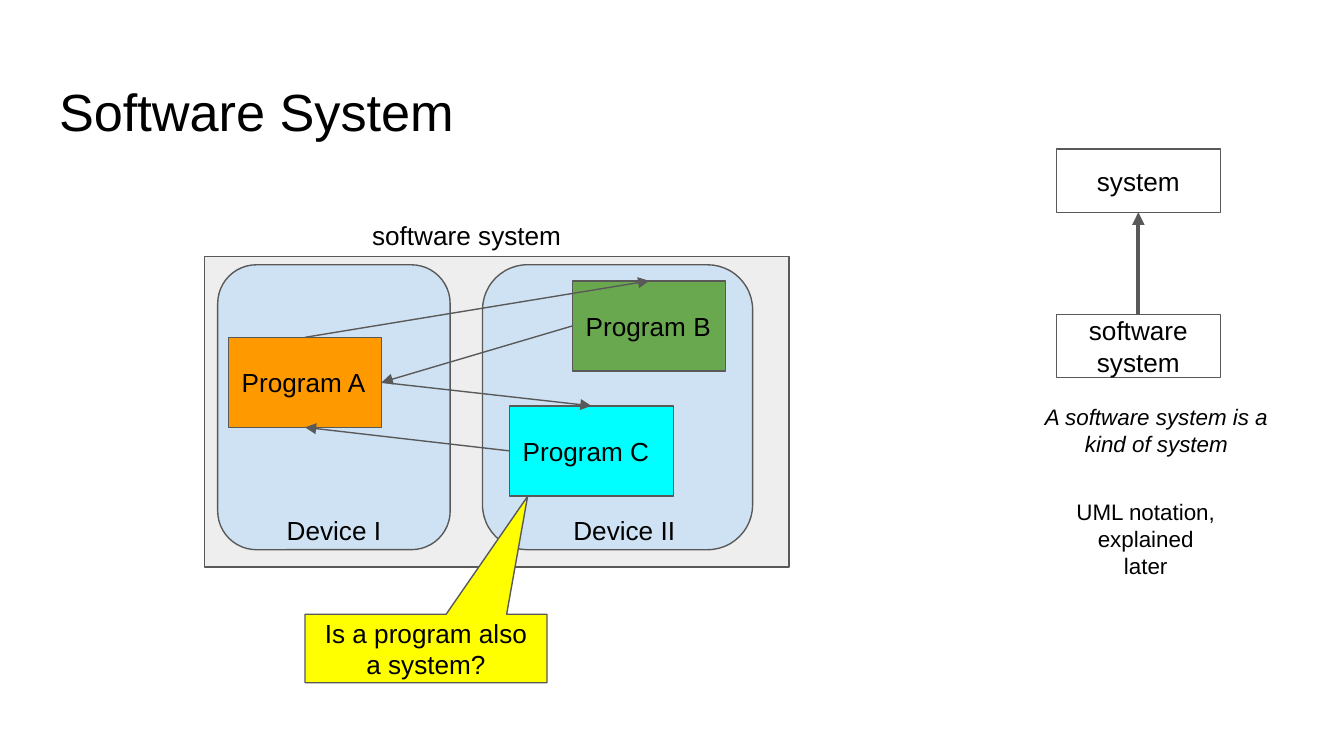
from lxml import etree
from pptx import Presentation
from pptx.dml.color import RGBColor
from pptx.enum.shapes import MSO_CONNECTOR, MSO_SHAPE
from pptx.enum.text import MSO_ANCHOR, MSO_AUTO_SIZE, PP_ALIGN
from pptx.oxml.ns import qn
from pptx.util import Inches, Pt

RECT, ROUND = MSO_SHAPE.RECTANGLE, MSO_SHAPE.ROUNDED_RECTANGLE
CALLOUT = MSO_SHAPE.ROUNDED_RECTANGULAR_CALLOUT
LEFT, CENTER = PP_ALIGN.LEFT, PP_ALIGN.CENTER
TOP, MIDDLE = MSO_ANCHOR.TOP, MSO_ANCHOR.MIDDLE
STRAIGHT = MSO_CONNECTOR.STRAIGHT
NORTH, WEST, SOUTH, EAST = range(4)  # connection sites of a rectangle
FONT, INK, GREY = "Arial", "000000", "595959"

# Content: boxes are left, top, width, height in inches
TITLE = "Software System"
FRAMES = [
    (RECT, (1.52, 1.91, 4.35, 2.31), "EEEEEE"),
    (ROUND, (1.62, 1.97, 1.73, 2.12), "CFE2F3"),
    (ROUND, (3.59, 1.97, 2.01, 2.12), "CFE2F3"),
]
NODES = {
    "A": ("Program A", (1.7, 2.51, 1.14, 0.67), "FF9900", LEFT),
    "B": ("Program B", (4.26, 2.09, 1.14, 0.67), "6AA84F", LEFT),
    "C": ("Program C", (3.79, 3.02, 1.22, 0.67), "00FFFF", LEFT),
    "system": ("system", (7.86, 1.11, 1.22, 0.47), None, CENTER),
    "software": ("software\nsystem", (7.86, 2.34, 1.22, 0.47), None, CENTER),
}
ARROWS = [
    ("A", EAST, "C", NORTH, 0.75),
    ("C", WEST, "A", SOUTH, 0.75),
    ("A", NORTH, "B", NORTH, 0.75),
    ("B", WEST, "A", EAST, 0.75),
    ("software", NORTH, "system", SOUTH, 2.25),
]
LABELS = [
    ("software system", (2.67, 1.53, 1.63, 0.29), dict(align=LEFT)),
    ("Device I", (1.78, 3.73, 1.41, 0.34), {}),
    ("Device II", (3.94, 3.73, 1.41, 0.34), {}),
    ("A software system is a kind of system", (7.6, 2.9, 2.01, 0.63),
     dict(size=12, italic=True)),
    ("UML notation, explained later", (7.89, 3.61, 1.27, 1.14), dict(size=12)),
]
QUESTION = ("Is a program also a system?", (2.27, 4.57, 1.8, 0.51), "FFFF00")
TIP = (0.42, -2.22, 0)


def color(code):
    return RGBColor.from_string(code)


def write(shape, text, size=14, align=CENTER, anchor=TOP, italic=False):
    frame = shape.text_frame
    frame.auto_size = MSO_AUTO_SIZE.NONE
    frame.word_wrap = True
    frame.vertical_anchor = anchor
    frame.margin_left = frame.margin_right = Inches(0.1)
    frame.margin_top = frame.margin_bottom = Inches(0.1)
    frame.text = text
    for para in frame.paragraphs:
        para.alignment = align
        font = para.font
        font.name, font.size, font.italic = FONT, Pt(size), italic
        font.color.rgb = color(INK)


def draw(kind, box, fill):
    shape = slide.shapes.add_shape(kind, *map(Inches, box))
    shape.shadow.inherit = False
    if fill:
        shape.fill.solid()
        shape.fill.fore_color.rgb = color(fill)
    else:
        shape.fill.background()
    shape.line.color.rgb = color(GREY)
    shape.line.width = Pt(0.75)
    return shape


def link(start, exit, end, entry, width):
    wire = slide.shapes.add_connector(STRAIGHT, 0, 0, 0, 0)
    wire.begin_connect(start, exit)
    wire.end_connect(end, entry)
    wire.line.color.rgb = color(GREY)
    wire.line.width = Pt(width)
    line = wire._element.spPr.find(qn("a:ln"))
    etree.SubElement(line, qn("a:tailEnd"), type="triangle")
    etree.SubElement(wire._element.spPr, qn("a:effectLst"))


# Slide at 16:9
deck = Presentation()
deck.slide_width = Inches(10)
deck.slide_height = deck.slide_width * 9 // 16
slide = deck.slides.add_slide(deck.slide_layouts[5])

# Title
title = slide.shapes.title
title.left, title.top, title.width, title.height = map(
    Inches, (0.34, 0.49, 9.32, 0.63))
write(title, TITLE, size=28, align=LEFT)

# System, devices and programs
for kind, box, fill in FRAMES:
    draw(kind, box, fill)
nodes = {}
for name, (text, box, fill, align) in NODES.items():
    nodes[name] = draw(RECT, box, fill)
    write(nodes[name], text, align=align, anchor=MIDDLE)

# Arrows
for start, exit, end, entry, width in ARROWS:
    link(nodes[start], exit, nodes[end], entry, width)

# Labels
for text, box, style in LABELS:
    write(slide.shapes.add_textbox(*map(Inches, box)), text, **style)

# Question callout
text, box, fill = QUESTION
bubble = draw(CALLOUT, box, fill)
for i, value in enumerate(TIP):
    bubble.adjustments[i] = value
write(bubble, text, anchor=MIDDLE)

deck.save("out.pptx")
